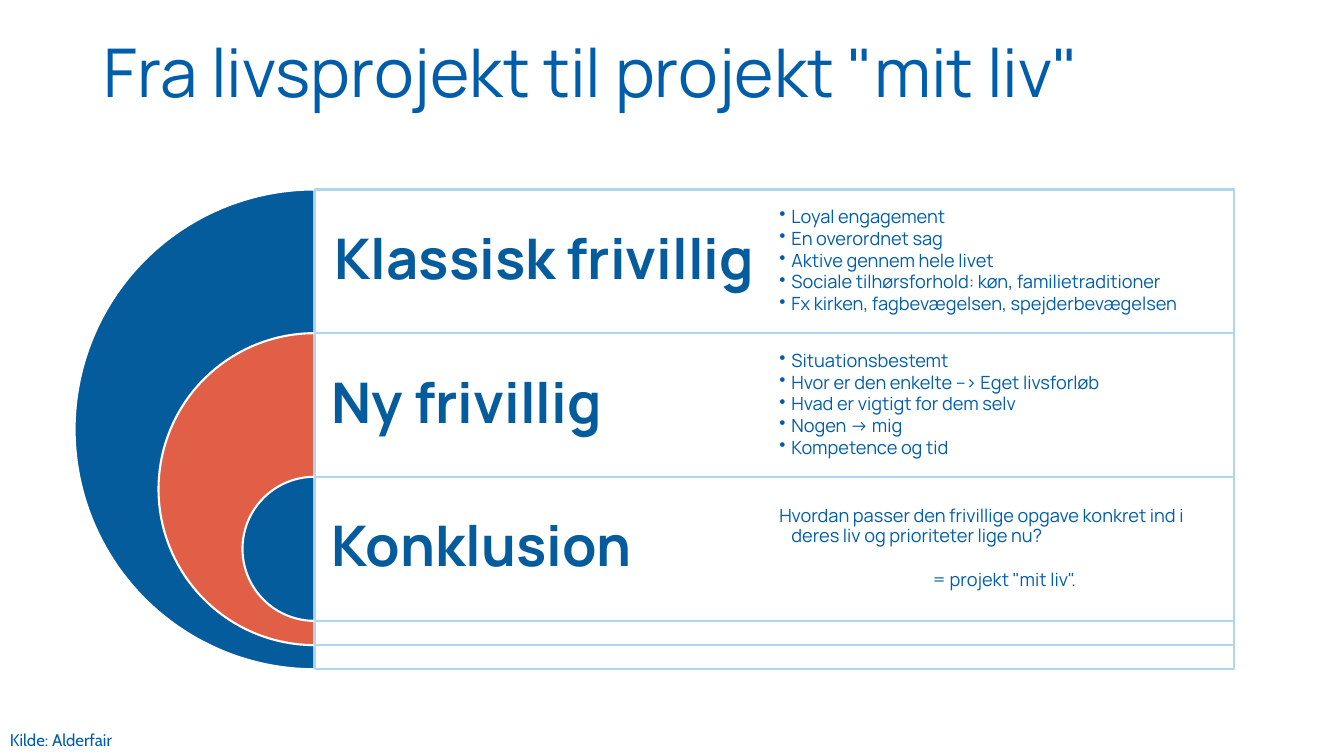
from lxml import etree
from pptx import Presentation
from pptx.dml.color import RGBColor
from pptx.enum.shapes import MSO_SHAPE
from pptx.enum.text import MSO_ANCHOR, PP_ALIGN
from pptx.oxml.ns import qn
from pptx.util import Inches, Pt

PIE, RECT = MSO_SHAPE.PIE, MSO_SHAPE.RECTANGLE
TOP, MIDDLE = MSO_ANCHOR.TOP, MSO_ANCHOR.MIDDLE
LEFT, CENTER = PP_ALIGN.LEFT, PP_ALIGN.CENTER

TITLE = 'Fra livsprojekt til projekt "mit liv"'
SOURCE = "Kilde: Alderfair"
BANDS = [
    ("Klassisk frivillig", CENTER, "navy", [
        "Loyal engagement",
        "En overordnet sag",
        "Aktive gennem hele livet",
        "Sociale tilhørsforhold: køn, familietraditioner",
        "Fx kirken, fagbevægelsen, spejderbevægelsen",
    ]),
    ("Ny frivillig", LEFT, "coral", [
        "Situationsbestemt",
        "Hvor er den enkelte --> Eget livsforløb",
        "Hvad er vigtigt for dem selv",
        "Nogen -> mig",
        "Kompetence og tid",
    ]),
    ("Konklusion", LEFT, "navy", []),
]
QUERY = ("Hvordan passer den frivillige opgave konkret ind i "
         "deres liv og prioriteter lige nu?")
ANSWER = '= projekt "mit liv".'

THEME = {
    "blue": RGBColor(0x00, 0x5D, 0xAA),
    "navy": RGBColor(0x04, 0x5C, 0x9C),
    "coral": RGBColor(0xE1, 0x5E, 0x47),
    "pale": RGBColor(0xAF, 0xD6, 0xEC),
    "white": RGBColor(0xFF, 0xFF, 0xFF),
    "font": "Manrope", "note_font": "Cabin",
    "title": 48, "head": 40, "body": 13, "note": 12, "line": 1.5,
}

AXIS, HEAD_TOP = 3.12, 1.88        # centre line of the pies, top of the bands
STEP, SHRINK = 1.425, 1.665        # drop per band, loss of height per band
FULL, WIDE, HALF = 4.76, 9.12, 4.56
HANG = 0.12


def add_box(slide, left, top, width, height, inset, anchor=TOP):
    frame = slide.shapes.add_textbox(
        Inches(left), Inches(top), Inches(width), Inches(height)).text_frame
    frame.word_wrap = True
    frame.vertical_anchor = anchor
    frame.margin_left = frame.margin_right = Inches(inset)
    frame.margin_top = frame.margin_bottom = Inches(min(inset, 0.17))
    return frame


def add_text(para, text, size, color="blue", bold=False, font="font"):
    run = para.add_run()
    run.text = text
    run.font.size = Pt(THEME[size])
    run.font.name = THEME[font]
    run.font.bold = bold
    run.font.color.rgb = THEME[color]


def add_item(para, text, bullet, align=LEFT):
    """Fill one hanging paragraph of the right column."""
    para.level = 1
    para.alignment = align
    para.line_spacing = 0.9
    para.space_after = Pt(1.5)
    props = para._p.get_or_add_pPr()
    props.set("marL", str(Inches(HANG)))
    props.set("indent", str(-Inches(HANG)))
    if bullet:
        etree.SubElement(props, qn("a:buChar")).set("char", "•")
    else:
        etree.SubElement(props, qn("a:buNone"))
    add_text(para, text, "body")


def add_form(slide, kind, left, top, width, height, fill, line):
    form = slide.shapes.add_shape(
        kind, Inches(left), Inches(top), Inches(width), Inches(height))
    form.shadow.inherit = False
    form.fill.solid()
    form.fill.fore_color.rgb = THEME[fill]
    form.line.color.rgb = THEME[line]
    form.line.width = Pt(THEME["line"])
    return form


def add_band(slide, rank, head, align, fill, items):
    top, size = HEAD_TOP + rank * STEP, FULL - rank * SHRINK
    pie = add_form(slide, PIE, AXIS - size / 2, top, size, size, fill, "white")
    pie.adjustments[0], pie.adjustments[1] = 54, 162
    rect = add_form(slide, RECT, AXIS, top, WIDE, size, "white", "pale")
    color = rect._element.spPr.find(qn("a:solidFill"))[0]
    etree.SubElement(color, qn("a:alpha")).set("val", "90000")

    para = add_box(slide, AXIS, top, HALF, STEP, 0.17, MIDDLE).paragraphs[0]
    para.alignment = align
    para.line_spacing = 0.9
    add_text(para, head, "head", "navy", True)

    frame = add_box(slide, AXIS + HALF, top, HALF, STEP, 0.05, MIDDLE)
    for spot, item in enumerate(items or [QUERY]):
        para = frame.add_paragraph() if spot else frame.paragraphs[0]
        add_item(para, item, bool(items))
    if not items:
        para = frame.add_paragraph()
        para.space_before = Pt(16)
        add_item(para, ANSWER, False, CENTER)


def main():
    deck = Presentation()
    deck.slide_width, deck.slide_height = Inches(13.33), Inches(7.5)
    slide = deck.slides.add_slide(deck.slide_layouts[6])

    para = add_box(slide, 1.03, 0.39, 10.92, 0.73, 0).paragraphs[0]
    para.line_spacing = 0.9
    add_text(para, TITLE, "title")

    frame = add_box(slide, 0, 7.19, 1.76, 0.3, 0.1)
    frame.margin_top = frame.margin_bottom = Inches(0.05)
    add_text(frame.paragraphs[0], SOURCE, "note", font="note_font")

    for rank, band in enumerate(BANDS):
        add_band(slide, rank, *band)
    deck.save("out.pptx")


if __name__ == "__main__":
    main()
